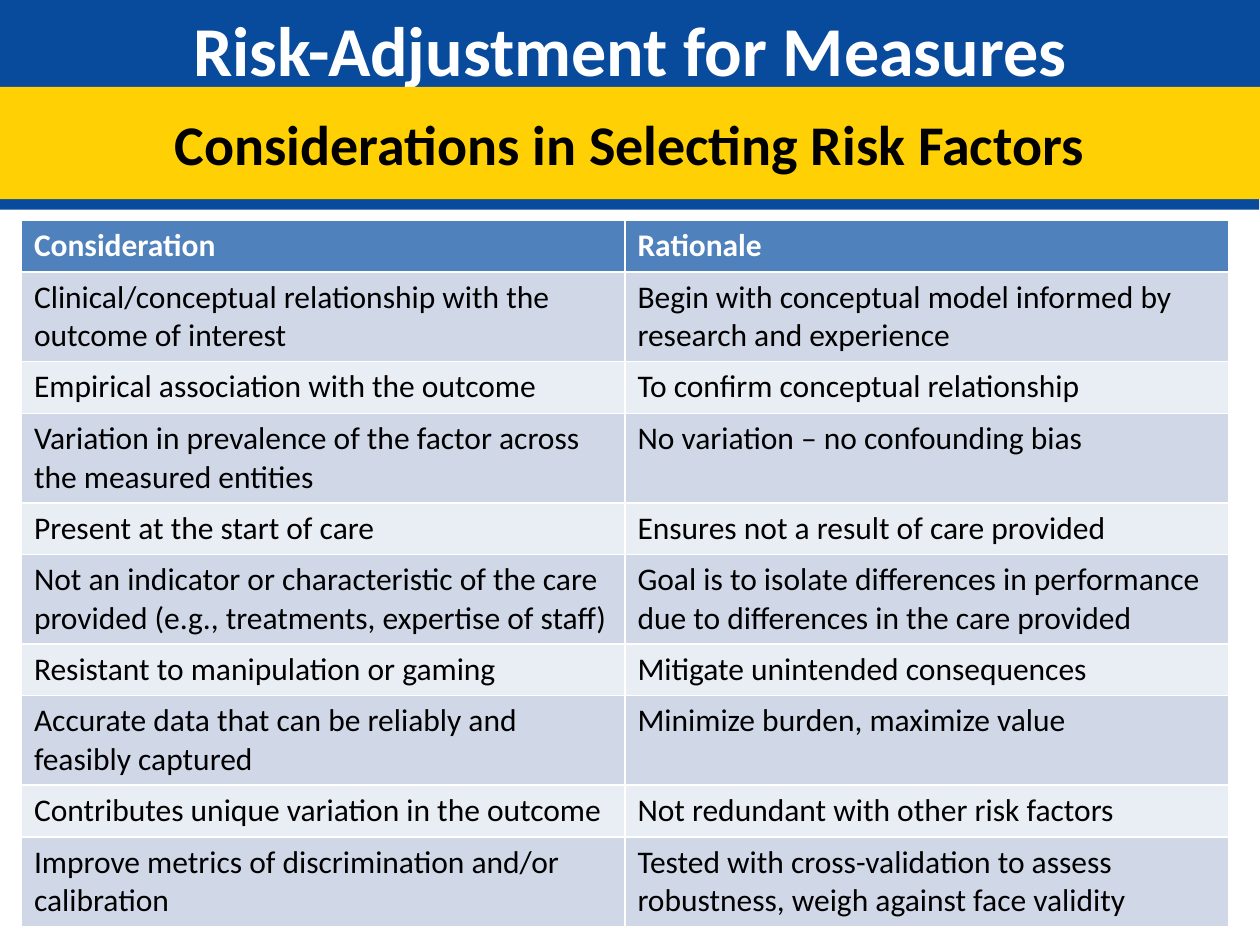
from lxml import etree
from pptx import Presentation
from pptx.dml.color import RGBColor
from pptx.enum.shapes import MSO_SHAPE
from pptx.enum.text import MSO_ANCHOR, MSO_AUTO_SIZE, PP_ALIGN
from pptx.oxml.ns import qn
from pptx.util import Inches, Pt

RECTANGLE = MSO_SHAPE.RECTANGLE
CENTER = PP_ALIGN.CENTER
TOP, MIDDLE = MSO_ANCHOR.TOP, MSO_ANCHOR.MIDDLE
NO_AUTOFIT = MSO_AUTO_SIZE.NONE
TITLE_ONLY = 5

COLORS = {
    "blue": "084A9C",
    "yellow": "FFD004",
    "header": "4F81BD",
    "odd_row": "D0D8E8",
    "even_row": "E9EDF4",
    "white": "FFFFFF",
    "black": "000000",
}

CONSIDERATIONS = [
    ("Consideration", "Rationale"),
    ("Clinical/conceptual relationship with the outcome of interest",
     "Begin with conceptual model informed by research and experience"),
    ("Empirical association with the outcome",
     "To confirm conceptual relationship"),
    ("Variation in prevalence of the factor across the measured entities",
     "No variation – no confounding bias"),
    ("Present at the start of care",
     "Ensures not a result of care provided"),
    ("Not an indicator or characteristic of the care provided "
     "(e.g., treatments, expertise of staff)",
     "Goal is to isolate differences in performance due to differences "
     "in the care provided"),
    ("Resistant to manipulation or gaming",
     "Mitigate unintended consequences"),
    ("Accurate data that can be reliably and feasibly captured",
     "Minimize burden, maximize value"),
    ("Contributes unique variation in the outcome",
     "Not redundant with other risk factors"),
    ("Improve metrics of discrimination and/or calibration",
     "Tested with cross-validation to assess robustness, "
     "weigh against face validity"),
]


class SlideBuilder:
    def __init__(self, slide, font_name="Calibri"):
        self.slide = slide
        self.font_name = font_name

    def color(self, name):
        return RGBColor.from_string(COLORS[name])

    def paint(self, target, name):
        target.fill.solid()
        target.fill.fore_color.rgb = self.color(name)

    def set_text(self, frame, text, size, color, bold):
        frame.text = text
        paragraph = frame.paragraphs[0]
        font = paragraph.font
        font.name = self.font_name
        font.size = Pt(size)
        font.bold = bold
        font.color.rgb = self.color(color)
        return paragraph

    def hard_shadow(self, shape, color):
        """Add an unblurred shadow 6 pt below the shape."""
        shape.shadow.inherit = False
        effects = shape._element.spPr.find(qn("a:effectLst"))
        shadow = etree.SubElement(
            effects, qn("a:outerShdw"), blurRad="0", dist=str(Pt(6)),
            dir=str(94 * 60000), algn="tl", rotWithShape="0")
        etree.SubElement(shadow, qn("a:srgbClr"), val=COLORS[color])

    def style_band(self, band, text, size, fill, text_color, shadow, anchor):
        self.paint(band, fill)
        band.line.fill.background()
        self.hard_shadow(band, shadow)
        frame = band.text_frame
        frame.word_wrap = True
        frame.auto_size = NO_AUTOFIT
        frame.vertical_anchor = anchor
        self.set_text(frame, text, size, text_color, True).alignment = CENTER

    def title(self, text, height):
        band = self.slide.shapes.title
        band.left = band.top = 0
        band.width, band.height = Inches(10), Inches(height)
        self.style_band(band, text, 40, "blue", "white", "yellow", TOP)

    def subtitle(self, text, top, height):
        band = self.slide.shapes.add_shape(
            RECTANGLE, 0, Inches(top), Inches(10), Inches(height))
        self.style_band(band, text, 32, "yellow", "black", "blue", MIDDLE)

    def table(self, rows, left, top, width, row_height):
        table = self.slide.shapes.add_table(
            len(rows), len(rows[0]), Inches(left), Inches(top),
            Inches(width), Inches(row_height * len(rows))).table
        for row_index, row in enumerate(rows):
            is_header = row_index == 0
            if is_header:
                fill = "header"
            else:
                fill = "odd_row" if row_index % 2 else "even_row"
            text_color = "white" if is_header else "black"
            for column_index, text in enumerate(row):
                cell = table.cell(row_index, column_index)
                self.paint(cell, fill)
                self.set_text(cell.text_frame, text, 18, text_color, is_header)


def main():
    presentation = Presentation()
    presentation.slide_width = Inches(10)
    presentation.slide_height = Inches(7.5)
    layout = presentation.slide_layouts[TITLE_ONLY]
    builder = SlideBuilder(presentation.slides.add_slide(layout))
    builder.title("Risk-Adjustment for Measures", height=1.47)
    builder.subtitle("Considerations in Selecting Risk Factors",
                     top=0.69, height=0.89)
    builder.table(CONSIDERATIONS, left=0.17, top=1.75, width=9.58,
                  row_height=0.41)
    presentation.save("out.pptx")


if __name__ == "__main__":
    main()
